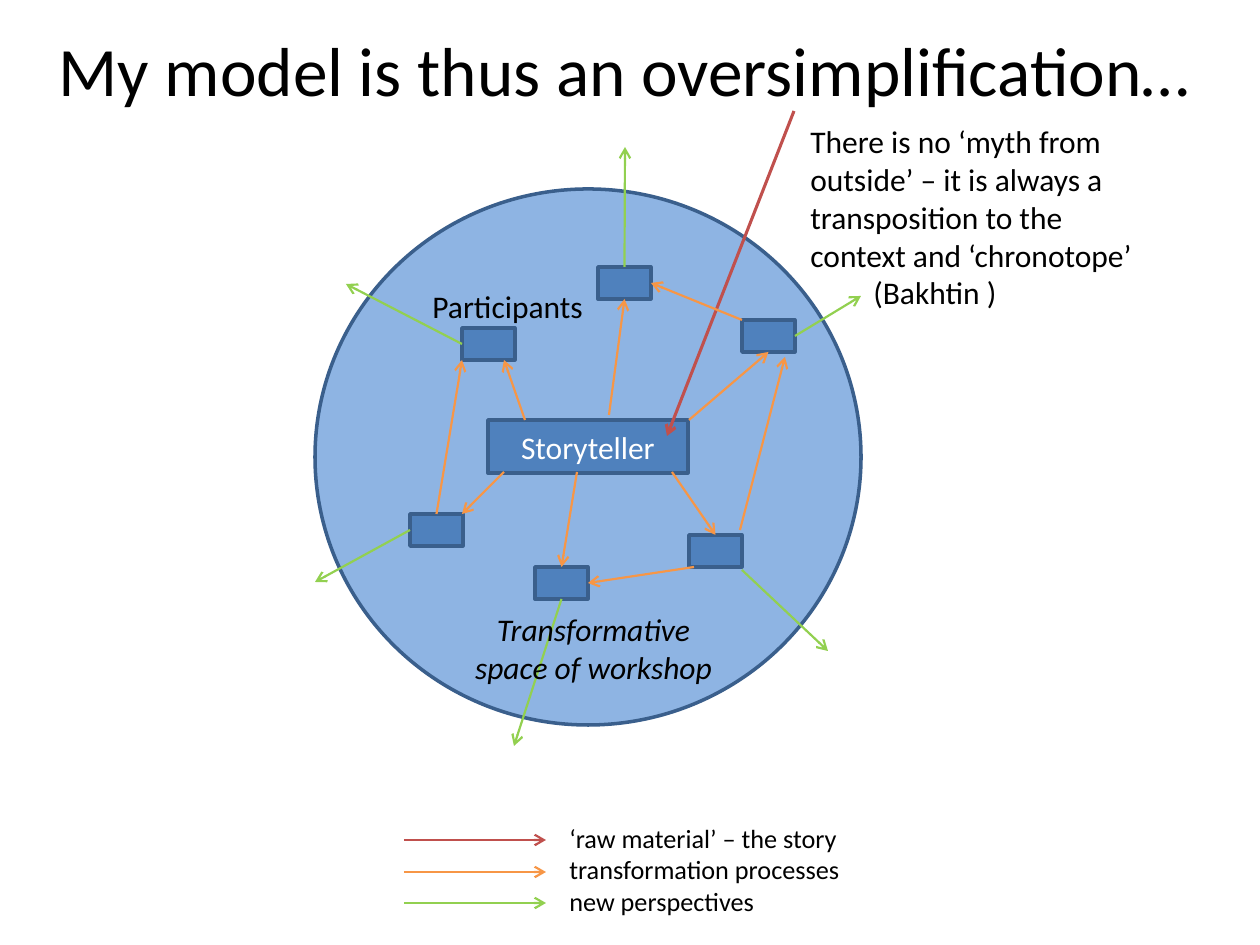
import collections
import dataclasses

import pptx
import pptx.dml.color
import pptx.enum.shapes
import pptx.enum.text
import pptx.oxml
import pptx.oxml.ns
import pptx.util

PX = 914400 / 126
Box = collections.namedtuple("Box", "x y w h")
TOP, LEFT, BOTTOM, RIGHT = range(4)
ALIGN = pptx.enum.text.PP_ALIGN
SHAPE = pptx.enum.shapes.MSO_SHAPE


@dataclasses.dataclass(frozen=True)
class Theme:
    font: str = "Calibri"
    text: str = "000000"
    light_text: str = "FFFFFF"
    space: str = "8EB4E3"
    node: str = "4F81BD"
    outline: str = "3A5F8C"
    story: str = "C0504D"
    transformation: str = "F79646"
    perspective: str = "92D050"
    title_size: float = 39.6
    body_size: float = 18
    legend_size: float = 15
    outline_width: float = 2
    arrow_width: float = 1.25
    story_width: float = 1.75


THEME = Theme()


def px(n):
    return pptx.util.Emu(round(n * PX))


def rgb(value):
    return pptx.dml.color.RGBColor.from_string(value)


def inside(box, x, y, w, h):
    return Box(box.x + x, box.y + y, w, h)


def format_text(p, size, color=THEME.text, align=ALIGN.LEFT, italic=False):
    p.alignment = align
    p.font.name = THEME.font
    p.font.size = pptx.util.Pt(size)
    p.font.color.rgb = rgb(color)
    p.font.italic = italic


def add_text(s, box, lines, size=THEME.body_size, **style):
    tf = s.shapes.add_textbox(*map(px, box)).text_frame
    tf.word_wrap = True
    tf.auto_size = pptx.enum.text.MSO_AUTO_SIZE.SHAPE_TO_FIT_TEXT
    tf.text = "\n".join(lines)
    for p in tf.paragraphs:
        format_text(p, size, **style)


def add_node(s, box, kind=SHAPE.RECTANGLE, fill=THEME.node):
    sp = s.shapes.add_shape(kind, *map(px, box))
    sp.shadow.inherit = False
    sp.fill.solid()
    sp.fill.fore_color.rgb = rgb(fill)
    sp.line.color.rgb = rgb(THEME.outline)
    sp.line.width = pptx.util.Pt(THEME.outline_width)
    return sp


def add_arrow(s, start, end, color, width=THEME.arrow_width):
    c = s.shapes.add_connector(
        pptx.enum.shapes.MSO_CONNECTOR.STRAIGHT, *map(px, start + end))
    c.line.color.rgb = rgb(color)
    c.line.width = pptx.util.Pt(width)
    ln = c.line._get_or_add_ln()
    tail = pptx.oxml.parse_xml(
        f'<a:tailEnd {pptx.oxml.ns.nsdecls("a")} type="arrow"/>')
    ln.append(tail)
    ln.addnext(pptx.oxml.parse_xml(
        f'<a:effectLst {pptx.oxml.ns.nsdecls("a")}/>'))
    return c


def add_title(s, box):
    title = s.shapes.title
    title.left, title.top, title.width, title.height = map(px, box)
    tf = title.text_frame
    tf.text = "My model is thus an oversimplification…"
    tf.auto_size = pptx.enum.text.MSO_AUTO_SIZE.NONE
    tf.vertical_anchor = pptx.enum.text.MSO_ANCHOR.MIDDLE
    format_text(tf.paragraphs[0], THEME.title_size, align=ALIGN.CENTER)


def add_workshop(s, box):
    add_node(s, box, SHAPE.OVAL, THEME.space)
    storyteller = add_node(s, inside(box, 173, 231, 200, 53))
    tf = storyteller.text_frame
    tf.text = "Storyteller"
    tf.vertical_anchor = pptx.enum.text.MSO_ANCHOR.MIDDLE
    format_text(tf.paragraphs[0], THEME.body_size, THEME.light_text, ALIGN.CENTER)

    corners = {"E": (427, 131), "SE": (374, 346), "S": (220, 378),
               "SW": (95, 325), "N": (283, 78), "NW": (147, 139)}
    participants = {name: add_node(s, inside(box, x, y, 53, 32))
                    for name, (x, y) in corners.items()}

    def link(start, end, color, width=THEME.arrow_width):
        """Each end is a point in the box, or a participant and one of its sides."""
        joined = [isinstance(e[0], str) for e in (start, end)]
        points = [(box.x, box.y) if j else (box.x + e[0], box.y + e[1])
                  for j, e in zip(joined, (start, end))]
        c = add_arrow(s, *points, color, width)
        if joined[0]:
            c.begin_connect(participants[start[0]], start[1])
        if joined[1]:
            c.end_connect(participants[end[0]], end[1])

    link((479, -78), (352, 247), THEME.story, THEME.story_width)
    from_storyteller = [
        ((210, 231), (189, 171)),
        ((294, 226), ("N", BOTTOM)),
        ((374, 231), ("E", BOTTOM)),
        ((357, 283), ("SE", TOP)),
        ((262, 283), ("S", TOP)),
        ((189, 283), (147, 325)),
    ]
    between_participants = [
        (("SW", TOP), (147, 171)),
        ((425, 341), (470, 168)),
        ((379, 378), ("S", RIGHT)),
        ((427, 131), ("N", RIGHT)),
    ]
    for start, end in from_storyteller + between_participants:
        link(start, end, THEME.transformation)

    perspectives = [
        (("NW", LEFT), (31, 95)),
        (("N", TOP), (310, -42)),
        (("E", RIGHT), (546, 107)),
        ((427, 381), (513, 462)),
        (("S", BOTTOM), (199, 557)),
        (("SW", LEFT), (0, 393)),
    ]
    for start, end in perspectives:
        link(start, end, THEME.perspective)

    add_text(s, inside(box, 105, 92, 189, 50), ["Participants"])
    add_text(s, inside(box, 136, 415, 285, 89),
             ["Transformative space of workshop"], align=ALIGN.CENTER, italic=True)


def add_legend(s, box):
    entries = [("‘raw material’ – the story", THEME.story),
               ("transformation processes", THEME.transformation),
               ("new perspectives", THEME.perspective)]
    for i, (_, color) in enumerate(entries):
        y = box.y + 24 + round(31.5 * i)
        add_arrow(s, (box.x, y), (box.x + 142, y), color)
    add_text(s, inside(box, 153, 0, box.w - 153, box.h),
             [label for label, _ in entries], THEME.legend_size)


def add_note(s, box):
    add_text(s, box, ["There is no ‘myth from outside’ – it is always a "
                      "transposition to the context and ‘chronotope’",
                      "\t(Bakhtin )"])


def main():
    prs = pptx.Presentation()
    prs.slide_width, prs.slide_height = px(1260), px(945)
    s = prs.slides.add_slide(prs.slide_layouts[5])
    add_title(s, Box(21, -10, 1207, 158))
    add_workshop(s, Box(315, 189, 546, 536))
    add_legend(s, Box(404, 816, 460, 108))
    add_note(s, Box(798, 116, 350, 204))
    prs.save("out.pptx")


if __name__ == "__main__":
    main()
